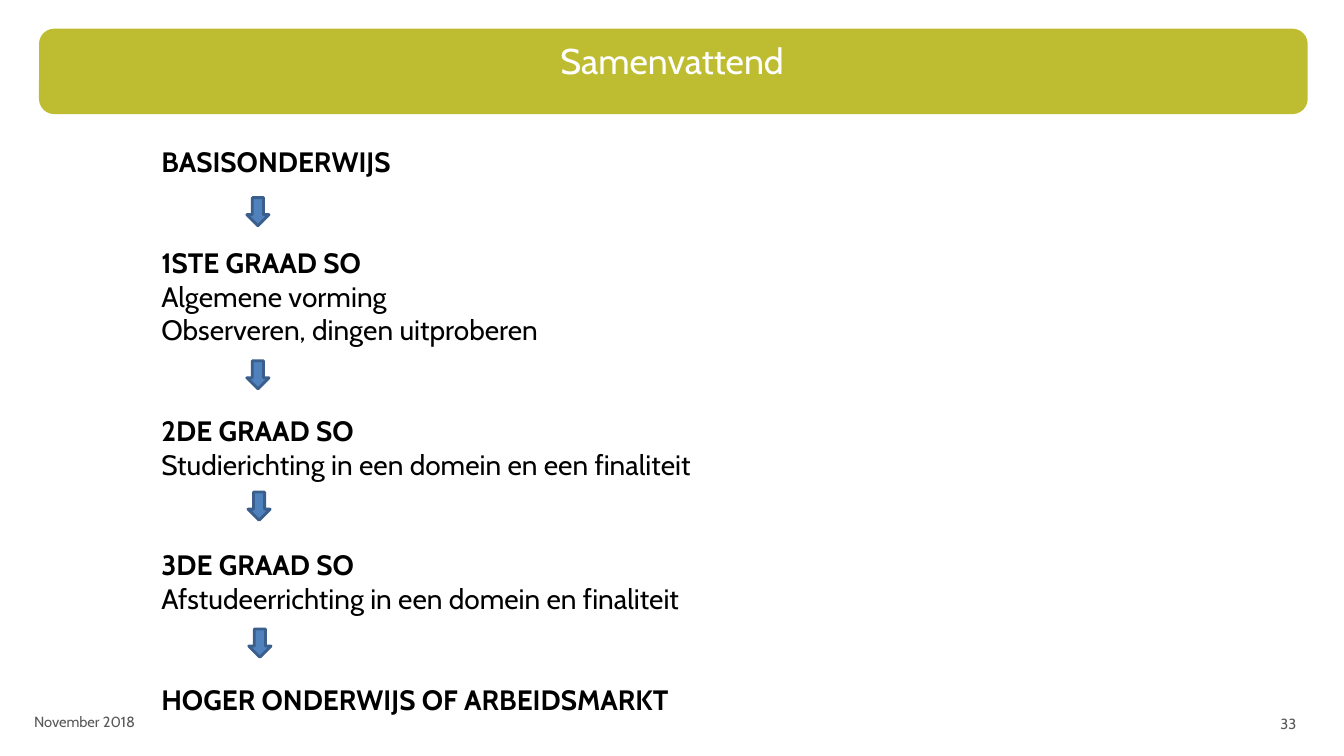
"""Build the summary slide on the steps from primary school to work."""
from pptx import Presentation
from pptx.dml.color import RGBColor
from pptx.enum.shapes import MSO_SHAPE
from pptx.enum.text import MSO_ANCHOR, PP_ALIGN
from pptx.util import Cm, Pt
from lxml import etree

ROUND, DOWN = MSO_SHAPE.ROUNDED_RECTANGLE, MSO_SHAPE.DOWN_ARROW
TOP, MIDDLE = MSO_ANCHOR.TOP, MSO_ANCHOR.MIDDLE
LEFT, CENTER, RIGHT = PP_ALIGN.LEFT, PP_ALIGN.CENTER, PP_ALIGN.RIGHT

FONT = "Cabin"
COLORS = {"bar": "BEBD31", "white": "FFFFFF", "text": "000000",
          "foot": "595959", "arrow": "4F81BD", "edge": "3A5F8C"}
TITLE = "Samenvattend"
STAGES = [
    ("BASISONDERWIJS", []),
    ("1STE GRAAD SO", ["Algemene vorming", "Observeren, dingen uitproberen"]),
    ("2DE GRAAD SO", ["Studierichting in een domein en een finaliteit"]),
    ("3DE GRAAD SO", ["Afstudeerrichting in een domein en finaliteit"]),
    ("HOGER ONDERWIJS OF ARBEIDSMARKT", []),
]
ARROWS = [(6.22, 4.98), (6.22, 9.09), (6.25, 12.4), (6.27, 15.85)]
FOOT = [
    ("November 2018", (0.61, 17.68, 8.66, 1.02), LEFT),
    ("33", (25.1, 17.73, 7.82, 1.02), RIGHT),
]


def color(name):
    return RGBColor.from_string(COLORS[name])


def place(shape, box):
    shape.left, shape.top, shape.width, shape.height = map(Cm, box)


def write(par, text, size, tint, bold=False):
    run = par.add_run()
    run.text = text
    font = run.font
    font.name, font.size, font.bold = FONT, Pt(size), bold
    font.color.rgb = color(tint)


def draw(shapes, kind, box, fill, edge):
    shape = shapes.add_shape(kind, *map(Cm, box))
    shape.shadow.inherit = False
    shape.fill.solid()
    shape.fill.fore_color.rgb = color(fill)
    shape.line.color.rgb = color(edge)
    shape.line.width = Pt(2)
    return shape


def plain(par, gap=0):
    props = par._p.get_or_add_pPr()
    props.set("marL", "0")
    props.set("indent", "0")
    etree.SubElement(props, props.tag.replace("pPr", "buNone"))
    par.space_before = Pt(gap)


def fill_body(frame):
    frame.vertical_anchor = TOP
    par = frame.paragraphs[0]
    for i, (head, lines) in enumerate(STAGES):
        if i:
            par = frame.add_paragraph()
        plain(par, 48 if i else 0)
        write(par, head, 20, "text", True)
        if lines:
            par = frame.add_paragraph()
            plain(par)
        for j, line in enumerate(lines):
            if j:
                par.add_line_break()
            write(par, line, 20, "text")


def main():
    deck = Presentation()
    deck.slide_width, deck.slide_height = Cm(33.87), Cm(19.05)
    slide = deck.slides.add_slide(deck.slide_layouts[1])
    shapes = slide.shapes

    bar = draw(shapes, ROUND, (1.02, 0.76, 31.9, 2.08), "bar", "bar")
    shapes.element.insert(2, bar.element)

    title, body = shapes.title, slide.placeholders[1]
    place(title, (1.7, 0.86, 30.48, 1.75))
    title.text_frame.vertical_anchor = TOP
    par = title.text_frame.paragraphs[0]
    par.alignment = CENTER
    write(par, TITLE, 25.5, "white")

    place(body, (3.81, 3.52, 26.26, 14.78))
    fill_body(body.text_frame)

    for text, box, align in FOOT:
        frame = shapes.add_textbox(*map(Cm, box)).text_frame
        frame.word_wrap = True
        frame.vertical_anchor = MIDDLE
        par = frame.paragraphs[0]
        par.alignment = align
        write(par, text, 10.5, "foot")

    for left, top in ARROWS:
        draw(shapes, DOWN, (left, top, 0.56, 0.71), "arrow", "edge")

    deck.save("out.pptx")


if __name__ == "__main__":
    main()
